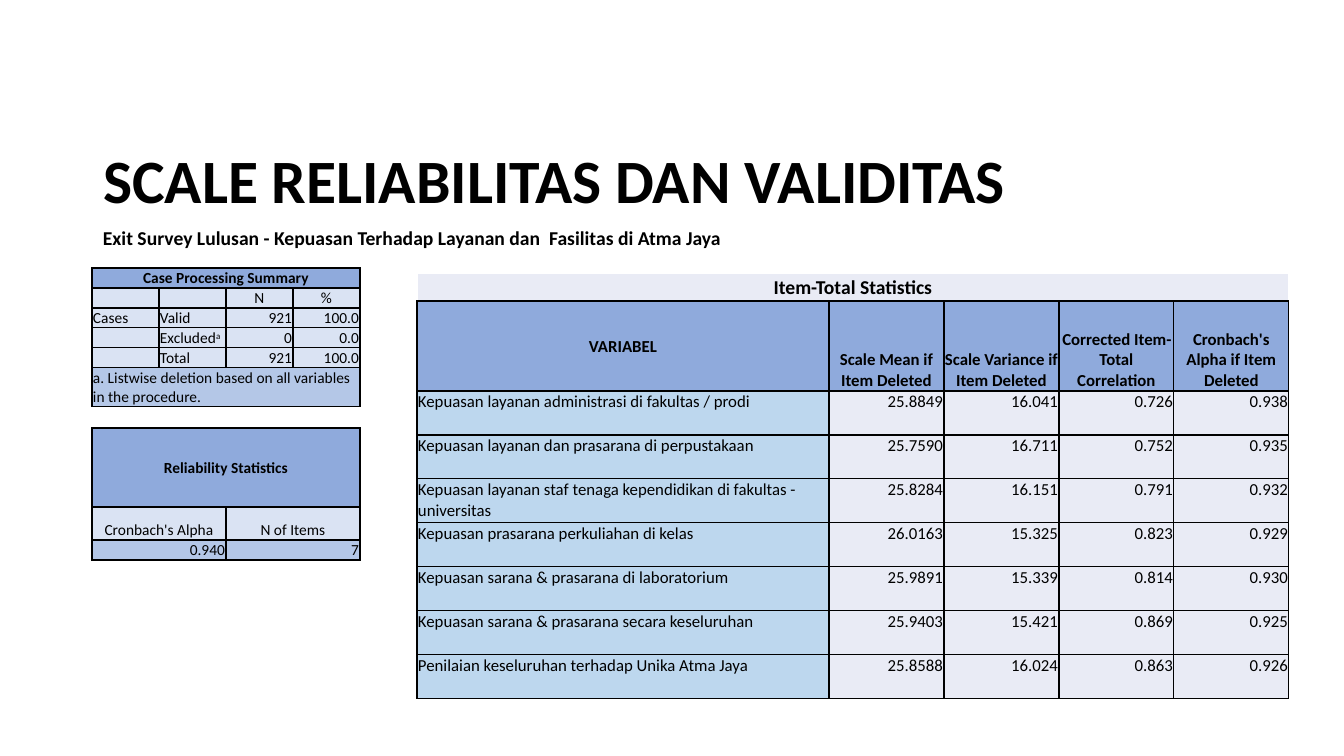
"""Build the slide on scale reliability and validity of the exit survey."""
from lxml import etree
from pptx import Presentation
from pptx import util as u
from pptx.dml.color import RGBColor
from pptx.enum import text as t
from pptx.oxml.ns import qn

PX = 914400 / 100.8
FONT = "Calibri"
COLORS = {"ink": "000000", "white": "FFFFFF", "head": "8FAADC", "pale": "DAE3F3",
          "mid": "B4C7E7", "label": "BDD7EE", "grey": "E9EBF5"}

TITLE = ("SCALE RELIABILITAS DAN VALIDITAS", (93, 136, 1159, 96), 44)
SUBTITLE = ("Exit Survey Lulusan - Kepuasan Terhadap Layanan dan  Fasilitas di Atma Jaya",
            (93, 224, 823, 45), 14)

ROW_STYLES = {
    "title": {"fill": "head", "anchor": "MIDDLE", "align": "CENTER", "bold": True},
    "open title": {"fill": "grey", "anchor": "MIDDLE", "align": "CENTER", "bold": True,
                   "size": 14, "edge": "white"},
    "bold head": {"fill": "head", "anchor": "BOTTOM", "align": "CENTER", "bold": True,
                  "first_anchor": "MIDDLE"},
    "head": {"fill": "pale", "anchor": "BOTTOM", "align": "CENTER"},
    "body": {"fill": "pale"},
    "foot": {"fill": "mid"},
    "item": {"fill": "grey", "first_fill": "label"},
}

TABLES = [
    {"at": (92, 268), "size": 11, "cols": [67, 67, 67, 67], "rows": [
        (20, "title", ["Case Processing Summary"]),
        (20, "head", ["", "", "N", "%"]),
        (20, "body", ["Cases", "Valid", "921", "100.0"]),
        (20, "body", ["", "Excluded^a", "0", "0.0"]),
        (20, "body", ["", "Total", "921", "100.0"]),
        (39, "foot", ["a. Listwise deletion based on all variables in the procedure."]),
    ]},
    {"at": (92, 428), "size": 11, "cols": [134, 134], "rows": [
        (79, "title", ["Reliability Statistics"]),
        (33, "head", ["Cronbach's Alpha", "N of Items"]),
        (20, "foot", ["0.940", "7"]),
    ]},
    {"at": (417, 273), "size": 12, "cols": [412, 115, 115, 115, 115], "rows": [
        (28, "open title", ["Item-Total Statistics"]),
        (90, "bold head", ["VARIABEL", "Scale Mean if Item Deleted",
                           "Scale Variance if Item Deleted",
                           "Corrected Item-Total Correlation",
                           "Cronbach's Alpha if Item Deleted"]),
        *[(44, "item", row) for row in [
            ["Kepuasan layanan administrasi di fakultas / prodi",
             "25.8849", "16.041", "0.726", "0.938"],
            ["Kepuasan layanan dan prasarana di perpustakaan",
             "25.7590", "16.711", "0.752", "0.935"],
            ["Kepuasan layanan staf tenaga kependidikan di fakultas - universitas",
             "25.8284", "16.151", "0.791", "0.932"],
            ["Kepuasan prasarana perkuliahan di kelas",
             "26.0163", "15.325", "0.823", "0.929"],
            ["Kepuasan sarana & prasarana di laboratorium",
             "25.9891", "15.339", "0.814", "0.930"],
            ["Kepuasan sarana & prasarana secara keseluruhan",
             "25.9403", "15.421", "0.869", "0.925"],
            ["Penilaian keseluruhan terhadap Unika Atma Jaya",
             "25.8588", "16.024", "0.863", "0.926"],
        ]],
    ]},
]


def px(length):
    return u.Emu(round(length * PX))


def color(name):
    return RGBColor.from_string(COLORS[name])


def add_span(para, words, size, bold):
    span = para.add_run()
    span.text = words
    formats = {"name": FONT, "size": u.Pt(size), "bold": bold}
    for key, value in formats.items():
        setattr(span.font, key, value)
    span.font.color.rgb = color("ink")
    return span


def write_heading(box, content):
    words, place, size = content
    for key, value in zip(("left", "top", "width", "height"), place):
        setattr(box, key, px(value))
    box.text_frame.word_wrap = True
    para = box.text_frame.paragraphs[0]
    para.alignment = t.PP_ALIGN.LEFT
    para.line_spacing = 0.9
    add_span(para, words, size, True)


def set_borders(cell, edge):
    props = cell._tc.get_or_add_tcPr()
    names = {"lnL": edge, "lnR": edge, "lnT": edge, "lnB": "ink"}
    for index, (side, name) in enumerate(names.items()):
        line = etree.Element(qn("a:" + side), w=str(u.Pt(1)))
        fill = etree.SubElement(line, qn("a:solidFill"))
        etree.SubElement(fill, qn("a:srgbClr"), val=COLORS[name])
        props.insert(index, line)


def write_cell(cell, words, style, size, first):
    is_number = words[:1].isdigit()
    align = style.get("align", "RIGHT" if is_number else "LEFT")
    anchor = style.get("anchor", "TOP")
    fill = style["fill"]
    if first:
        anchor = style.get("first_anchor", anchor)
        fill = style.get("first_fill", fill)
    formats = {"margin_left": px(1), "margin_right": px(1), "margin_top": px(1),
               "margin_bottom": 0, "vertical_anchor": getattr(t.MSO_ANCHOR, anchor)}
    for key, value in formats.items():
        setattr(cell, key, value)
    cell.fill.solid()
    cell.fill.fore_color.rgb = color(fill)
    set_borders(cell, style.get("edge", "ink"))

    para = cell.text_frame.paragraphs[0]
    para.alignment = getattr(t.PP_ALIGN, align)
    size = style.get("size", size)
    if not words:
        etree.SubElement(para._p, qn("a:endParaRPr"), sz=str(size * 100))
        return
    base, _, mark = words.partition("^")
    bold = style.get("bold", False)
    add_span(para, base, size, bold)
    if mark:
        span = add_span(para, mark, size, bold)
        span._r.get_or_add_rPr().set("baseline", "30000")


def add_statistics(page, content):
    rows, cols = content["rows"], content["cols"]
    width, height = sum(cols), sum(row[0] for row in rows)
    frame = page.shapes.add_table(len(rows), len(cols),
                                  *map(px, (*content["at"], width, height)))
    table = frame.table
    table.first_row = table.horz_banding = False
    for column, size in zip(table.columns, cols):
        column.width = px(size)
    for r, (row_height, kind, words) in enumerate(rows):
        table.rows[r].height = px(row_height)
        if len(words) == 1:
            table.cell(r, 0).merge(table.cell(r, len(cols) - 1))
        for c in range(len(cols)):
            value = words[c] if c < len(words) else ""
            write_cell(table.cell(r, c), value, ROW_STYLES[kind], content["size"], c == 0)


def main():
    deck = Presentation()
    deck.slide_width, deck.slide_height = px(1344), px(756)
    page = deck.slides.add_slide(deck.slide_layouts[5])
    write_heading(page.shapes.title, TITLE)
    page.shapes.title.text_frame.vertical_anchor = t.MSO_ANCHOR.MIDDLE
    write_heading(page.shapes.add_textbox(0, 0, 0, 0), SUBTITLE)
    for content in TABLES:
        add_statistics(page, content)
    deck.save("out.pptx")


if __name__ == "__main__":
    main()
